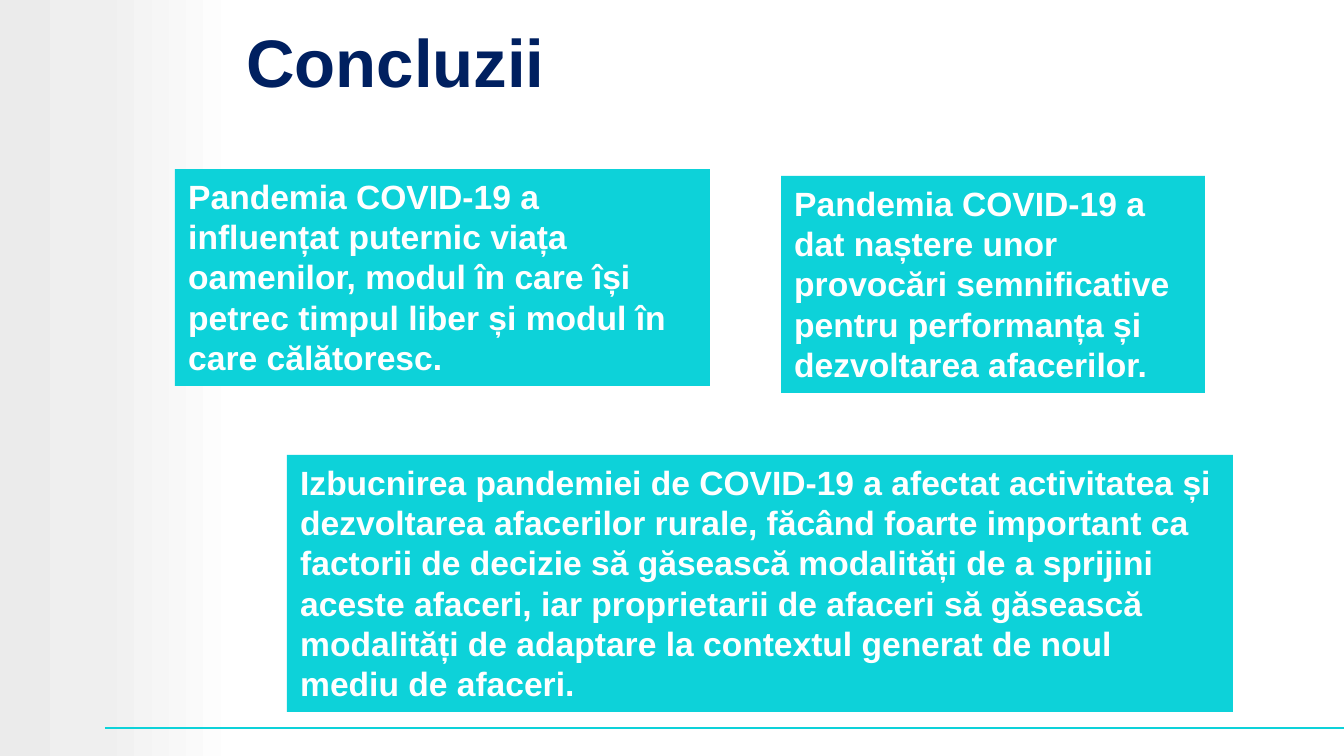
from copy import deepcopy

from pptx import Presentation
from pptx.dml.color import RGBColor
from pptx.enum.shapes import MSO_CONNECTOR, MSO_SHAPE
from pptx.enum.text import MSO_ANCHOR, MSO_AUTO_SIZE, PP_ALIGN
from pptx.oxml.ns import qn
from pptx.util import Inches, Pt
from lxml.etree import SubElement

WIDTH, HEIGHT = 1344, 756
TURQUOISE = "0DD2D9"
NAVY = "002060"
WHITE = "FFFFFF"
SIDE_STOPS = [(0, "EBEBEB"), (0.42, "EFEFEF"), (1, WHITE)]
CONCLUSIONS = [
    ((175, 169, 535, 217),
     "Pandemia COVID-19 a influențat puternic viața oamenilor, modul în care "
     "își petrec timpul liber și modul în care călătoresc."),
    ((781, 176, 424, 217),
     "Pandemia COVID-19 a dat naștere unor provocări semnificative pentru "
     "performanța și dezvoltarea afacerilor."),
    ((287, 455, 946, 257),
     "Izbucnirea pandemiei de COVID-19 a afectat activitatea și dezvoltarea "
     "afacerilor rurale, făcând foarte important ca factorii de decizie să "
     "găsească modalități de a sprijini aceste afaceri, iar proprietarii de "
     "afaceri să găsească modalități de adaptare la contextul generat de noul "
     "mediu de afaceri."),
]


def px(n):
    return Inches(n / 134.4)


def color(value):
    return RGBColor.from_string(value)


def add_rect(s, box):
    sp = s.shapes.add_shape(MSO_SHAPE.RECTANGLE, *map(px, box))
    sp.shadow.inherit = False
    sp.line.fill.background()
    return sp


def set_text(sp, text, *, size=18, fill=WHITE, anchor=MSO_ANCHOR.TOP,
             auto_size=MSO_AUTO_SIZE.NONE):
    tf = sp.text_frame
    tf.word_wrap = True
    tf.auto_size = auto_size
    tf.vertical_anchor = anchor
    p = tf.paragraphs[0]
    p.alignment = PP_ALIGN.LEFT
    r = p.add_run()
    r.text = text
    r.font.name = "Arial"
    r.font.size = Pt(size)
    r.font.bold = True
    r.font.color.rgb = color(fill)


def add_side_band(s):
    sp = add_rect(s, (0, 0, 238, HEIGHT))
    sp.fill.gradient()
    sp.fill.gradient_angle = 0
    stops = sp._element.spPr.find(qn("a:gradFill")).find(qn("a:gsLst"))
    stops.append(deepcopy(stops[0]))
    for stop, (position, value) in zip(sp.fill.gradient_stops, SIDE_STOPS):
        stop.position = position
        stop.color.rgb = color(value)


def add_footer_line(s):
    line = s.shapes.add_connector(
        MSO_CONNECTOR.STRAIGHT, px(105), px(728), px(WIDTH), px(728))
    line.line.color.rgb = color(TURQUOISE)
    line.line.width = Pt(1)
    SubElement(line._element.spPr, qn("a:effectLst"))


def add_title(s, text):
    sp = s.shapes.add_textbox(*map(px, (233, 4, 1111, 114)))
    set_text(sp, text, size=36, fill=NAVY, anchor=MSO_ANCHOR.MIDDLE)


def add_conclusion(s, box, text):
    sp = add_rect(s, box)
    sp.fill.solid()
    sp.fill.fore_color.rgb = color(TURQUOISE)
    set_text(sp, text, auto_size=MSO_AUTO_SIZE.SHAPE_TO_FIT_TEXT)


def main():
    prs = Presentation()
    prs.slide_width, prs.slide_height = px(WIDTH), px(HEIGHT)
    s = prs.slides.add_slide(prs.slide_layouts[6])
    add_side_band(s)
    add_footer_line(s)
    add_title(s, "Concluzii")
    for box, text in CONCLUSIONS:
        add_conclusion(s, box, text)
    prs.save("out.pptx")


if __name__ == "__main__":
    main()
